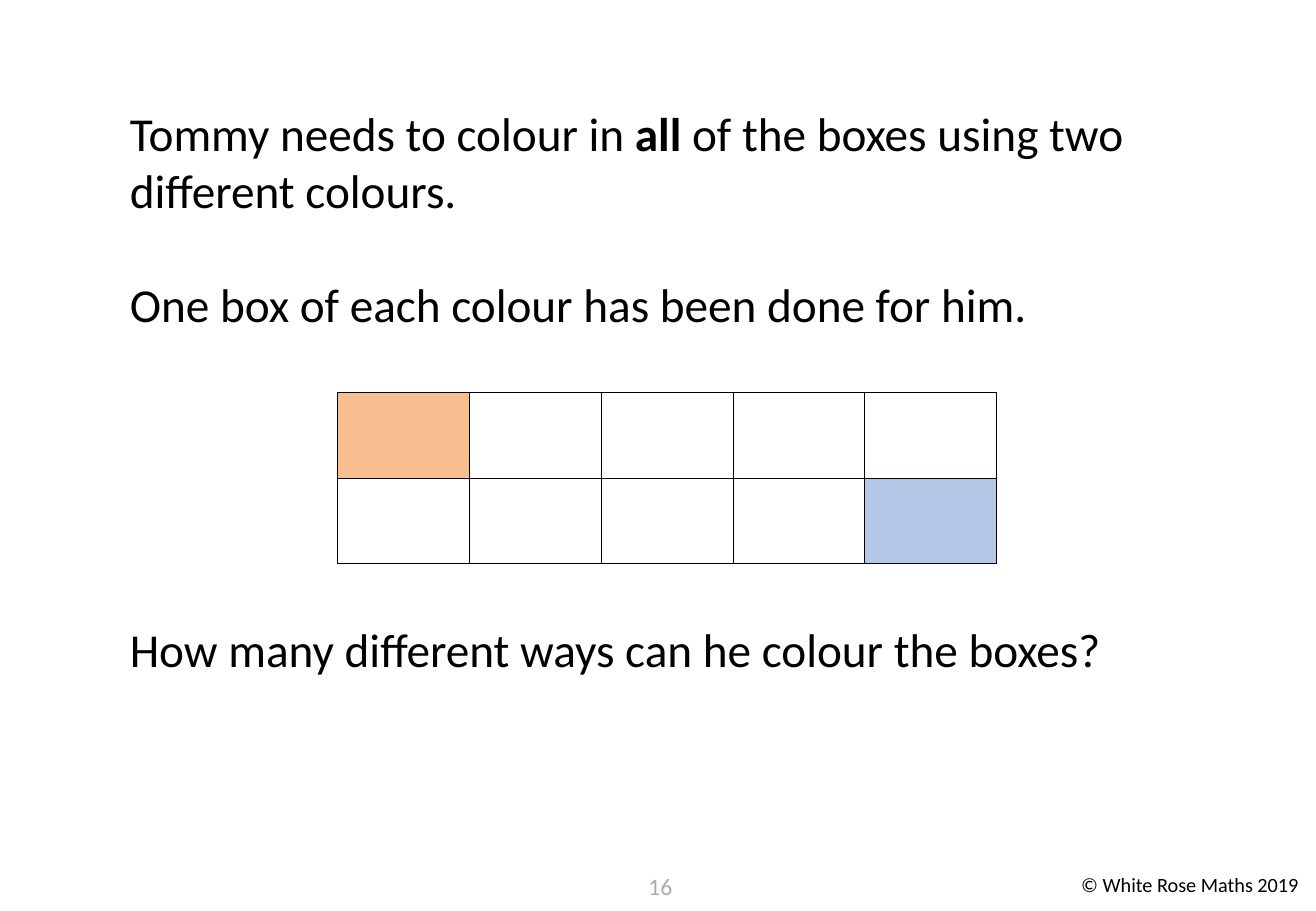
from lxml import etree
from pptx import Presentation
from pptx.dml.color import RGBColor
from pptx.enum.text import PP_ALIGN
from pptx.oxml.ns import qn
from pptx.util import Inches, Pt

LEFT, CENTER = PP_ALIGN.LEFT, PP_ALIGN.CENTER
FONT = "Calibri"
COLORS = {"text": "000000", "number": "AFABAB", "border": "000000",
          "orange": "F9BE8F", "blue": "B4C7E7"}

# Each paragraph: space before in points, then (text, bold) runs
QUESTION = [
    (0, [("Tommy needs to colour in ", False), ("all ", True),
         ("of the boxes using two different colours.", False)]),
    (34.2, [("One box of each colour has been done for him.", False)]),
    (171, [("How many different ways can he colour the boxes?", False)]),
]
COPYRIGHT = [(0, [("© White Rose Maths 2019", False)])]
PAGE_NUMBER = [(0, [("16", False)])]

ROWS, COLS = 2, 5
GRID_BOX = (2.78, 3.23, 5.42, 1.41)
COLOURED_BOXES = {(0, 0): "orange", (1, 4): "blue"}
BORDER_WIDTH = Pt(0.5)


def rgb(name):
    return RGBColor.from_string(COLORS[name])


def add_text(slide, box, paragraphs, size, color="text", align=LEFT, wrap=True):
    tf = slide.shapes.add_textbox(*map(Inches, box)).text_frame
    tf.word_wrap = wrap
    for i, (space, runs) in enumerate(paragraphs):
        p = tf.paragraphs[0] if i == 0 else tf.add_paragraph()
        p.alignment = align
        p.space_before = Pt(space)
        for text, bold in runs:
            r = p.add_run()
            r.text = text
            r.font.name = FONT
            r.font.size = Pt(size)
            r.font.bold = bold
            r.font.color.rgb = rgb(color)


def add_borders(cell):
    """Draw all four cell edges; they must come before the fill in tcPr."""
    tcPr = cell._tc.get_or_add_tcPr()
    for i, edge in enumerate(("a:lnL", "a:lnR", "a:lnT", "a:lnB")):
        ln = etree.Element(qn(edge), w=str(BORDER_WIDTH))
        fill = etree.SubElement(ln, qn("a:solidFill"))
        etree.SubElement(fill, qn("a:srgbClr"), val=COLORS["border"])
        tcPr.insert(i, ln)


def add_grid(slide):
    table = slide.shapes.add_table(ROWS, COLS, *map(Inches, GRID_BOX)).table
    table.first_row = False
    table.horz_banding = False
    for row in range(ROWS):
        for col in range(COLS):
            cell = table.cell(row, col)
            if (row, col) in COLOURED_BOXES:
                cell.fill.solid()
                cell.fill.fore_color.rgb = rgb(COLOURED_BOXES[row, col])
            else:
                cell.fill.background()
            add_borders(cell)


def main():
    prs = Presentation()
    prs.slide_width, prs.slide_height = Inches(10.83), Inches(7.5)
    s = prs.slides.add_slide(prs.slide_layouts[6])
    add_text(s, (8.8, 7.13, 2.03, 0.3), COPYRIGHT, 12, wrap=False)
    add_text(s, (5.18, 7.13, 0.51, 0.37), PAGE_NUMBER, 14, "number", CENTER)
    add_text(s, (0.97, 0.81, 8.81, 4.81), QUESTION, 28)
    add_grid(s)
    prs.save("out.pptx")


if __name__ == "__main__":
    main()
